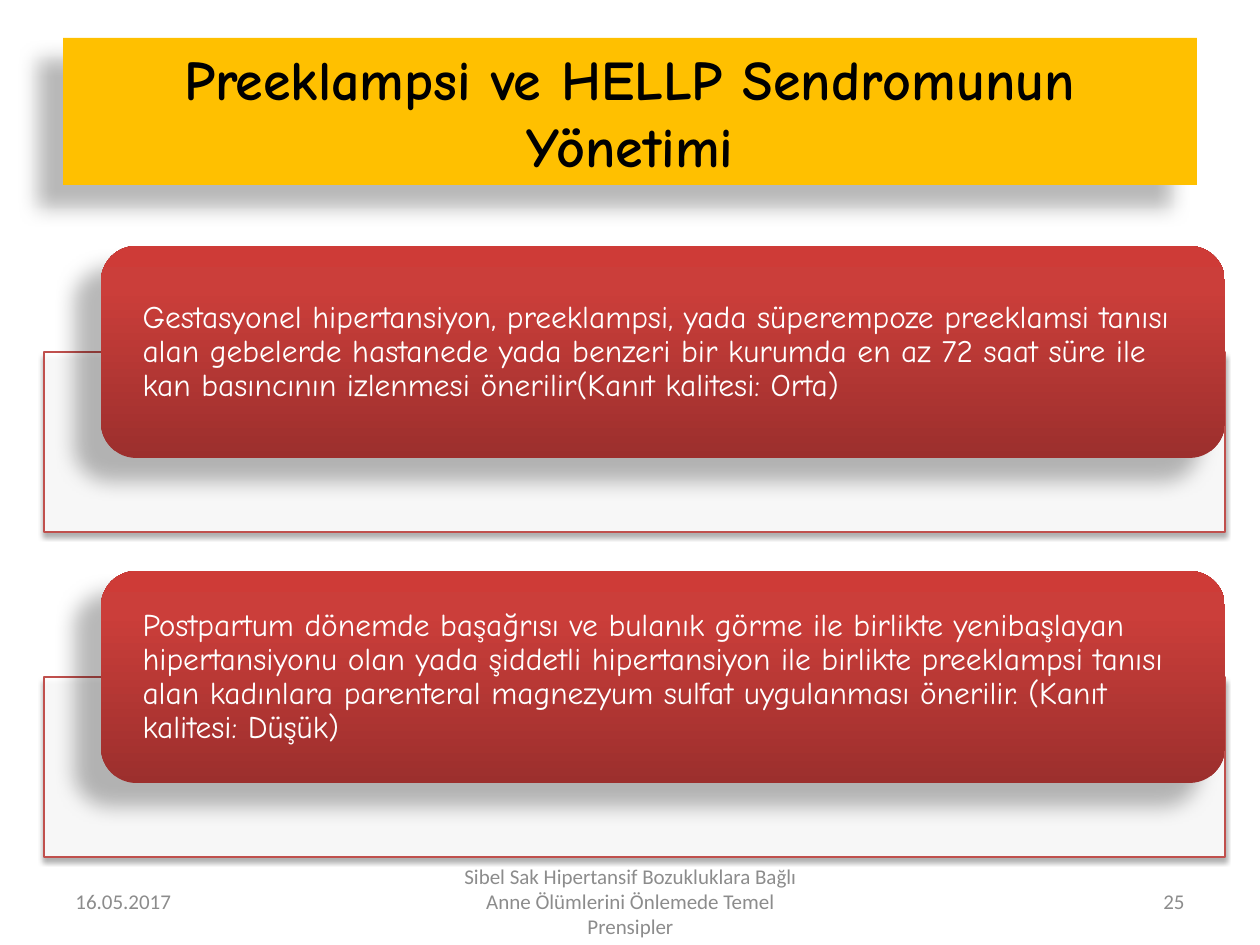
import copy
import pptx
import pptx.util
import pptx.dml.color
import pptx.enum.shapes
import pptx.enum.text
import pptx.oxml
import pptx.oxml.ns

PX = 914400 / 126
COLORS = {
    "title": "FFC000", "black": "000000", "white": "FFFFFF", "footer": "8C8C8C",
    "outline": "C0504D", "dark": "9C2F2D", "mid": "CB3E3A", "light": "CE3B37",
}
RGB = {name: pptx.dml.color.RGBColor.from_string(value) for name, value in COLORS.items()}
ALIGN = pptx.enum.text.PP_ALIGN
SHAPE = pptx.enum.shapes.MSO_SHAPE
qn = pptx.oxml.ns.qn


def add_shadow(shape, alpha, blur, distance, angle):
    shape.shadow.inherit = False
    effects = shape._element.spPr.find(qn("a:effectLst"))
    effects.append(pptx.oxml.parse_xml(
        '<a:outerShdw xmlns:a="http://schemas.openxmlformats.org/drawingml/2006/main" '
        f'blurRad="{round(blur * 12700)}" dist="{round(distance * 12700)}" '
        f'dir="{angle * 60000}" algn="ctr" rotWithShape="0"><a:srgbClr val="{COLORS["black"]}">'
        f'<a:alpha val="{alpha * 1000}"/></a:srgbClr></a:outerShdw>'))


def write(box, text, size, font, color, align=ALIGN.LEFT):
    frame = box.text_frame
    frame.word_wrap = True
    frame.auto_size = pptx.enum.text.MSO_AUTO_SIZE.NONE
    frame.vertical_anchor = pptx.enum.text.MSO_ANCHOR.MIDDLE
    para = frame.paragraphs[0]
    para.alignment = align
    span = para.add_run()
    span.text = text
    span.font.size = pptx.util.Pt(size)
    span.font.name = font
    span.font.color.rgb = RGB[color]
    return para


deck = pptx.Presentation()
deck.slide_width = round(1260 * PX)
deck.slide_height = round(945 * PX)
page = deck.slides.add_slide(deck.slide_layouts[5])

# Title banner
title = page.shapes.title
title.left, title.top, title.width, title.height = [round(v * PX) for v in (63, 38, 1134, 147)]
title.fill.solid()
title.fill.fore_color.rgb = RGB["title"]
add_shadow(title, 28, 11.8, 19.7, 141)
para = write(title, "Preeklampsi ve HELLP Sendromunun Yönetimi", 32, "Comic Neue", "black", ALIGN.CENTER)
para.runs[0].font.bold = True

# Footer: date, talk, page number
footers = [
    (63, 294, "16.05.2017", ALIGN.LEFT),
    (431, 399, "Sibel Sak Hipertansif Bozukluklara Bağlı Anne Ölümlerini Önlemede Temel Prensipler",
     ALIGN.CENTER),
    (903, 294, "25", ALIGN.RIGHT),
]
for left, width, text, align in footers:
    box = page.shapes.add_textbox(*[round(v * PX) for v in (left, 876, width, 50)])
    write(box, text, 12, "Calibri", "footer", align)

# Recommendations: a pale panel with a red card over it
recommendations = [
    "Gestasyonel hipertansiyon, preeklampsi, yada süperempoze preeklamsi tanısı alan gebelerde "
    "hastanede yada benzeri bir kurumda en az 72 saat süre ile kan basıncının izlenmesi "
    "önerilir(Kanıt kalitesi: Orta)",
    "Postpartum dönemde başağrısı ve bulanık görme ile birlikte yenibaşlayan hipertansiyonu olan "
    "yada şiddetli hipertansiyon ile birlikte preeklampsi tanısı alan kadınlara parenteral "
    "magnezyum sulfat uygulanması önerilir. (Kanıt kalitesi: Düşük)",
]
for index, text in enumerate(recommendations):
    top = 246 + 325 * index

    panel = page.shapes.add_shape(
        SHAPE.RECTANGLE, *[round(v * PX) for v in (44, top + 106, 1181, 180)])
    panel.fill.solid()
    panel.fill.fore_color.rgb = RGB["white"]
    fill_color = panel._element.spPr.find(qn("a:solidFill")).find(qn("a:srgbClr"))
    fill_color.append(fill_color.makeelement(qn("a:alpha"), {"val": "90000"}))
    panel.line.color.rgb = RGB["outline"]
    panel.line.width = pptx.util.Pt(0.75)
    add_shadow(panel, 35, 3.1, 1.8, 90)

    card = page.shapes.add_shape(
        SHAPE.ROUNDED_RECTANGLE, *[round(v * PX) for v in (101, top, 1124, 212)])
    card.fill.gradient()
    card.fill.gradient_angle = 90
    stops = card._element.spPr.find(qn("a:gradFill")).find(qn("a:gsLst"))
    stops.append(copy.deepcopy(stops[-1]))
    for stop, position, name in zip(card.fill.gradient_stops, (0, 0.8, 1), ("dark", "mid", "light")):
        stop.position = position
        stop.color.rgb = RGB[name]
    card.line.fill.background()
    add_shadow(card, 28, 11.8, 19.7, 141)

    box = page.shapes.add_textbox(*[round(v * PX) for v in (111, top + 11, 1104, 190)])
    frame = box.text_frame
    frame.margin_left = frame.margin_right = pptx.util.Inches(0.25)
    frame.margin_top = frame.margin_bottom = 0
    para = write(box, text, 18, "Comic Neue", "white")
    para.line_spacing = 0.9

deck.save("out.pptx")
